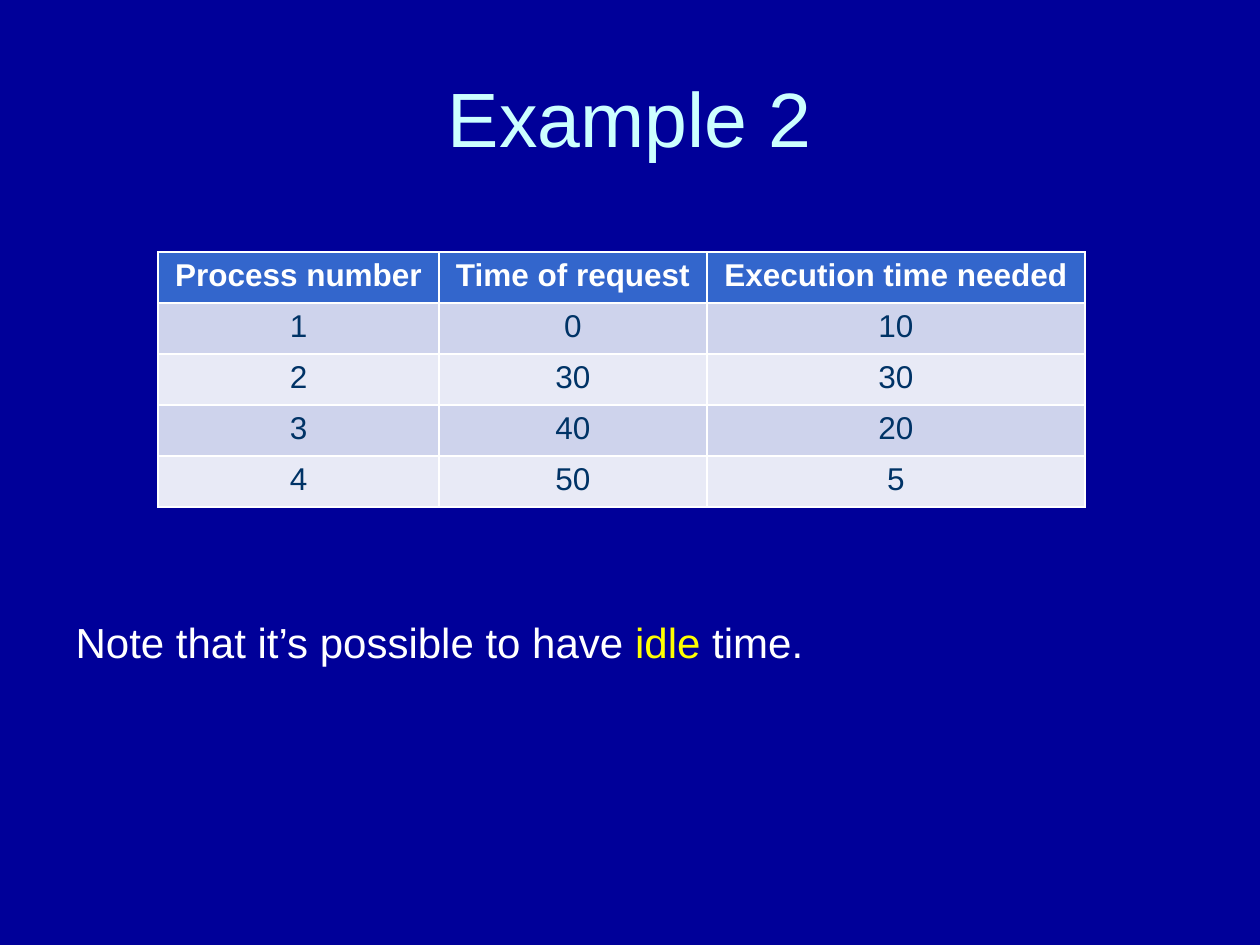
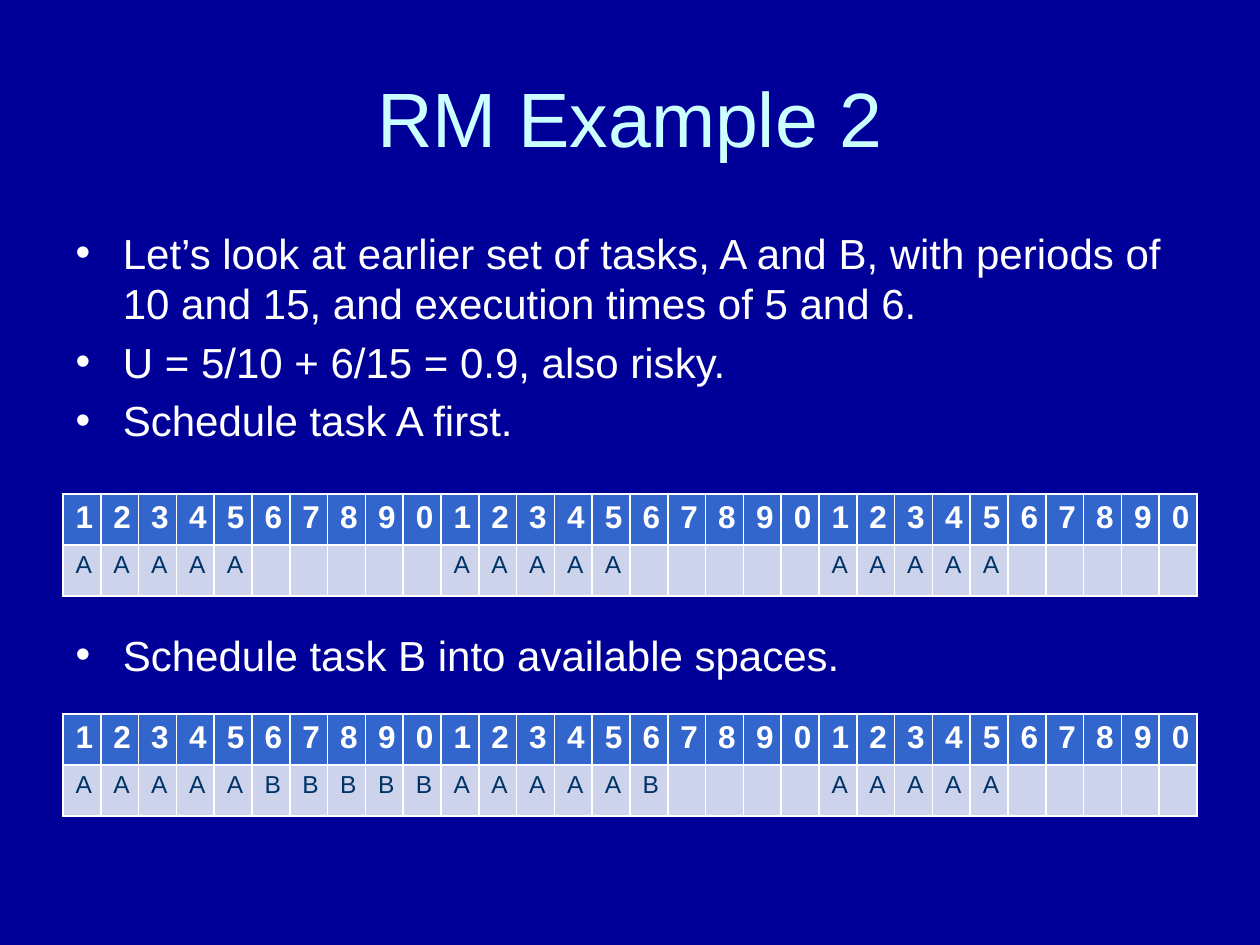
from lxml import etree
from pptx import Presentation
from pptx.dml.color import RGBColor
from pptx.enum.text import MSO_ANCHOR, MSO_AUTO_SIZE, PP_ALIGN
from pptx.oxml.ns import qn
from pptx.util import Emu, Pt

CENTER, LEFT = PP_ALIGN.CENTER, PP_ALIGN.LEFT
MIDDLE, TOP = MSO_ANCHOR.MIDDLE, MSO_ANCHOR.TOP
NO_AUTOFIT = MSO_AUTO_SIZE.NONE

PX_PER_INCH = 126


def px(length):
    return Emu(round(length * 914400 / PX_PER_INCH))


def color(hex_code):
    return RGBColor.from_string(hex_code)


class Deck:
    """Holds the shared style and the current slide."""

    FONT = "Arial"
    BACKGROUND = "000099"
    TITLE = "CCFFFF"
    TEXT = "FFFFFF"
    ACCENT = "FFFF00"
    HEADER_FILL = "3366CC"
    BAND_FILLS = ("CED3EC", "E8EAF6")
    CELL_TEXT = "003366"
    ROW_HEIGHT = 51
    SIDE, CONTENT_WIDTH = 63, 1134

    def __init__(self):
        self.prs = Presentation()
        self.prs.slide_width, self.prs.slide_height = px(1260), px(945)
        backdrop = self.prs.slide_master.background.fill
        backdrop.solid()
        backdrop.fore_color.rgb = color(self.BACKGROUND)
        self.slide = None

    def new_slide(self, heading):
        self.slide = self.prs.slides.add_slide(self.prs.slide_layouts[1])
        title = self.slide.shapes.title
        self.place(title, 38, 158)
        title.text_frame.vertical_anchor = MIDDLE
        paragraph = title.text_frame.paragraphs[0]
        paragraph.alignment = CENTER
        self.run(paragraph, heading, 44, self.TITLE)

    def place(self, placeholder, top, height):
        placeholder.left, placeholder.top = px(self.SIDE), px(top)
        placeholder.width, placeholder.height = px(self.CONTENT_WIDTH), px(height)
        placeholder.text_frame.auto_size = NO_AUTOFIT

    def run(self, paragraph, text, size, hex_code, bold=False):
        run = paragraph.add_run()
        run.text = text
        run.font.name, run.font.size, run.font.bold = self.FONT, Pt(size), bold
        run.font.color.rgb = color(hex_code)

    def body(self, items, bulleted=True, top_inset=6):
        """Each item is (space before in points or None, [(text, colour), ...])."""
        body = self.slide.placeholders[1]
        self.place(body, 221, 624)
        frame = body.text_frame
        frame.margin_top = px(top_inset)
        for index, (space_before, runs) in enumerate(items):
            paragraph = frame.add_paragraph() if index else frame.paragraphs[0]
            if space_before:
                paragraph.space_before = Pt(space_before)
            if not bulleted:
                etree.SubElement(paragraph._p.get_or_add_pPr(), qn("a:buNone"))
            for text, hex_code in runs:
                self.run(paragraph, text, 24, hex_code)

    def table(self, left, top, widths, rows, body_size=18, align=CENTER):
        table = self.slide.shapes.add_table(
            len(rows), len(widths), px(left), px(top),
            px(sum(widths)), px(self.ROW_HEIGHT * len(rows))).table
        for column, width in zip(table.columns, widths):
            column.width = px(width)
        for row_index, row in enumerate(rows):
            header = row_index == 0
            fill = self.HEADER_FILL if header else self.BAND_FILLS[(row_index - 1) % 2]
            size = 18 if header else body_size
            text_color = self.TEXT if header else self.CELL_TEXT
            for column_index, text in enumerate(row):
                cell = table.cell(row_index, column_index)
                cell.fill.solid()
                cell.fill.fore_color.rgb = color(fill)
                cell.vertical_anchor = TOP
                paragraph = cell.text_frame.paragraphs[0]
                paragraph.alignment = align
                if text.strip():
                    self.run(paragraph, text, size, text_color, header)
                else:
                    paragraph.font.size = Pt(size)

    def timeline(self, top, schedule):
        """One column per time unit; a dot in the schedule is an idle unit."""
        units = "1234567890" * 3
        slots = schedule.replace(".", " ")
        column_width = self.CONTENT_WIDTH / len(units)
        self.table(self.SIDE, top, [column_width] * len(units),
                   [units, slots], body_size=14, align=LEFT)


def main():
    deck = Deck()

    # Process requests
    deck.new_slide("Example 2")
    deck.body([(None, [("Note that it’s possible to have ", deck.TEXT),
                       ("idle", deck.ACCENT),
                       (" time.", deck.TEXT)])],
              bulleted=False, top_inset=395)
    deck.table(158, 252, [281, 268, 378], [
        ("Process number", "Time of request", "Execution time needed"),
        ("1", "0", "10"),
        ("2", "30", "30"),
        ("3", "40", "20"),
        ("4", "50", "5"),
    ])

    # Rate-monotonic schedule of tasks A and B
    deck.new_slide("RM Example 2")
    steps = [
        (None, "Let’s look at earlier set of tasks, A and B, with periods of "
               "10 and 15, and execution times of 5 and 6."),
        (None, "U = 5/10 + 6/15 = 0.9, also risky."),
        (None, "Schedule task A first."),
        (105, "Schedule task B into available spaces."),
    ]
    deck.body([(space, [(text, deck.TEXT)]) for space, text in steps])
    deck.timeline(494, "AAAAA....." * 3)
    deck.timeline(714, "AAAAABBBBB" + "AAAAAB...." + "AAAAA.....")

    deck.prs.save("out.pptx")


if __name__ == "__main__":
    main()
